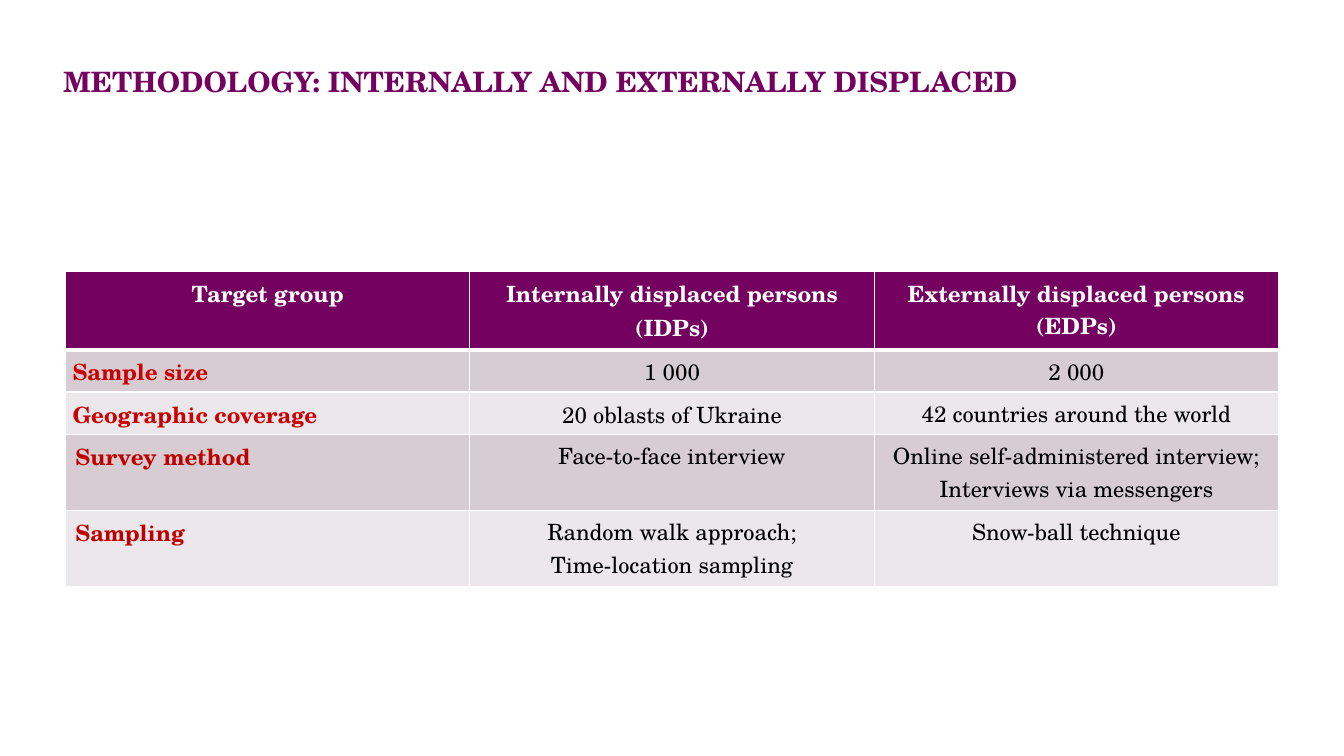
from lxml.etree import SubElement
from pptx import Presentation
from pptx.dml.color import RGBColor
from pptx.enum.text import MSO_ANCHOR, PP_ALIGN
from pptx.oxml.ns import qn
from pptx.util import Cm, Pt

# Content
TITLE = "METHODOLOGY: INTERNALLY AND EXTERNALLY DISPLACED"
ROWS = [
    [["Target group"], ["Internally displaced persons (IDPs)"],
     ["Externally displaced persons", "(EDPs)"]],
    [["Sample size"], ["1 000"], ["2 000"]],
    [["Geographic coverage"], ["20 oblasts of Ukraine"],
     ["42 countries around the world"]],
    [["Survey method"], ["Face-to-face interview"],
     ["Online self-administered interview;", "Interviews via messengers"]],
    [["Sampling"], ["Random walk approach;", "Time-location sampling"],
     ["Snow-ball technique"]],
]

# Look
FONT = "TeX Gyre Schola"
PLUM = RGBColor(0x74, 0x00, 0x5F)
WHITE = RGBColor(0xFF, 0xFF, 0xFF)
BLACK = RGBColor(0, 0, 0)
RED = RGBColor(0xCC, 0, 0)
DEEP = RGBColor(0xC0, 0, 0)
BANDS = [RGBColor(0xEB, 0xE7, 0xEA), RGBColor(0xD6, 0xCC, 0xD2)]

# Cell layouts: anchor, side margin, top margin, bottom margin (cm)
PLAIN = (MSO_ANCHOR.TOP, 0.25, 0.13, 0.13)
TIGHT = (MSO_ANCHOR.MIDDLE, 0.18, 0, 0)
ROOMY = (MSO_ANCHOR.TOP, 0.25, 0.15, 0.13)

# Table grid (cm)
LEFT, TOP, WIDTH = 1.65, 6.83, 10.19
HIGH = [1.98, 1.05, 1.07, 1.91, 1.91]


def add_run(para, text, size, color, bold):
    run = para.add_run()
    run.text = text
    font = run.font
    font.name, font.size, font.bold = FONT, Pt(size), bold
    font.color.rgb = color


def layout(row, col):
    """Return the cell layout and its line spacing."""
    if row > 2 or (row == 0 and col < 2):
        return PLAIN, None
    if col == 2:
        return ROOMY, 0.93
    return TIGHT, 0.93 if row == 1 else 1.07


def ink(row, col):
    if row == 0:
        return WHITE
    if col > 0:
        return BLACK
    return RED if row < 3 else DEEP


def add_edges(cell, row):
    props = cell._tc.get_or_add_tcPr()
    for side in "LRTB":
        heavy = (row == 0 and side == "B") or (row == 1 and side == "T")
        line = SubElement(props, qn("a:ln" + side),
                          w=str(Pt(3 if heavy else 1)))
        fill = SubElement(line, qn("a:solidFill"))
        SubElement(fill, qn("a:srgbClr"), val=str(WHITE))


def fill_cell(cell, lines, row, col):
    add_edges(cell, row)
    cell.fill.solid()
    cell.fill.fore_color.rgb = BANDS[row % 2] if row else PLUM
    (anchor, side, top, base), space = layout(row, col)
    cell.vertical_anchor = anchor
    cell.margin_left = cell.margin_right = Cm(side)
    cell.margin_top, cell.margin_bottom = Cm(top), Cm(base)
    frame = cell.text_frame
    for i, text in enumerate(lines):
        para = frame.add_paragraph() if i else frame.paragraphs[0]
        label = row > 0 and col == 0
        para.alignment = PP_ALIGN.LEFT if label else PP_ALIGN.CENTER
        if space:
            para.line_spacing = space
        add_run(para, text, 16, ink(row, col), row == 0 or col == 0)


def main():
    deck = Presentation()
    deck.slide_width, deck.slide_height = Cm(33.87), Cm(19.05)
    slide = deck.slides.add_slide(deck.slide_layouts[6])

    # Table
    size = len(ROWS), len(ROWS[0])
    table = slide.shapes.add_table(
        *size, Cm(LEFT), Cm(TOP), Cm(WIDTH * size[1]), Cm(sum(HIGH))).table
    table.first_row = table.horz_banding = False
    for col in table.columns:
        col.width = Cm(WIDTH)
    for r, cells in enumerate(ROWS):
        table.rows[r].height = Cm(HIGH[r])
        for c, lines in enumerate(cells):
            fill_cell(table.cell(r, c), lines, r, c)

    # Title
    box = slide.shapes.add_textbox(Cm(1.35), Cm(1.5), Cm(32.5), Cm(1.12))
    box.text_frame.word_wrap = True
    add_run(box.text_frame.paragraphs[0], TITLE, 20, PLUM, True)

    deck.save("out.pptx")


if __name__ == "__main__":
    main()
